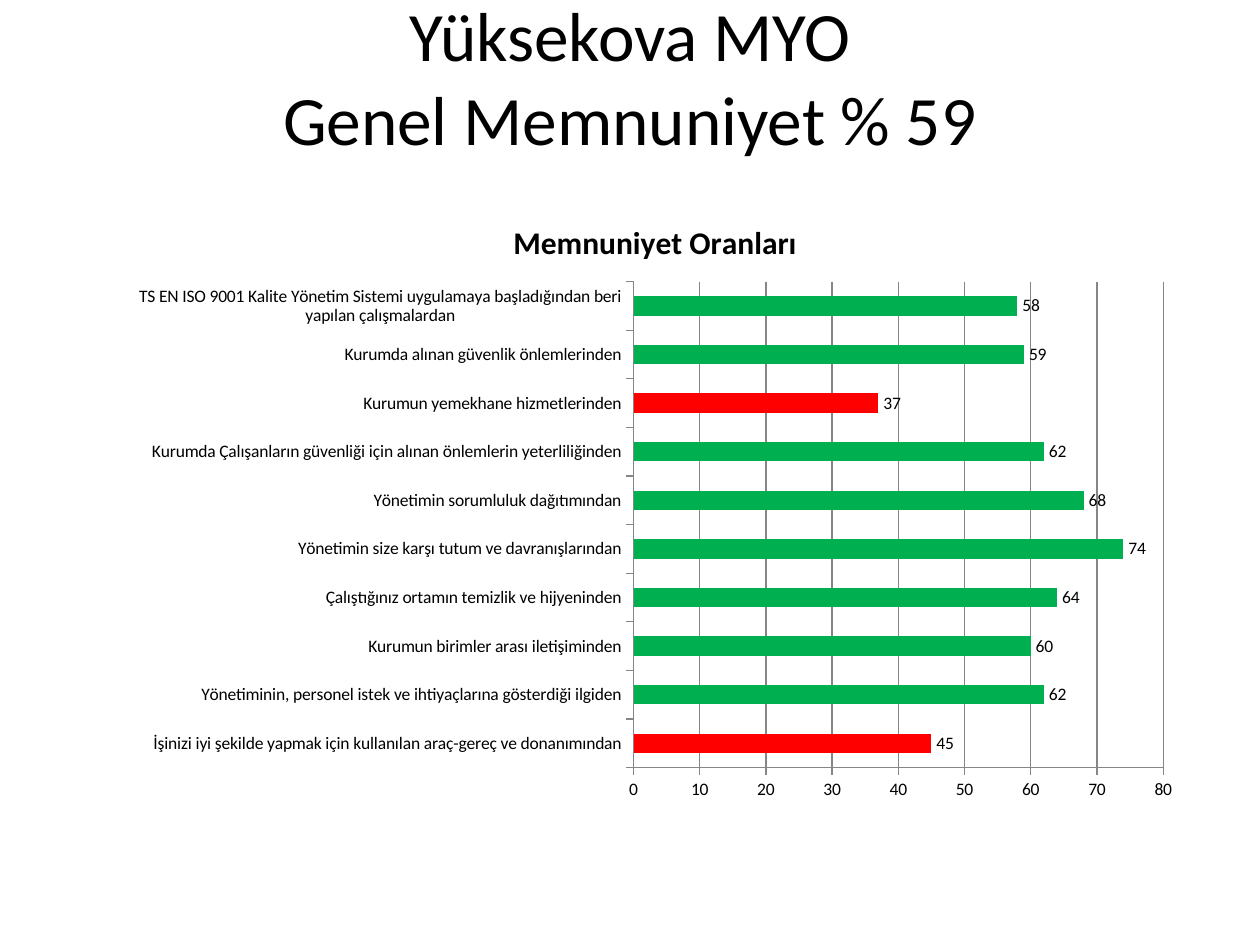
from dataclasses import dataclass

from lxml.etree import SubElement
from pptx import Presentation
from pptx.chart.data import CategoryChartData
from pptx.dml.color import RGBColor
from pptx.enum.chart import XL_CHART_TYPE as ChartType, XL_LABEL_POSITION as LabelPosition
from pptx.enum.chart import XL_TICK_MARK as TickMark
from pptx.enum.text import MSO_ANCHOR as Anchor, MSO_AUTO_SIZE as AutoSize, PP_ALIGN as Align
from pptx.oxml.ns import qn
from pptx.util import Inches, Pt

HEADING = "Yüksekova MYO\vGenel Memnuniyet % 59"
MEASURE = "Memnuniyet Oranları"
RATES = [
    ("İşinizi iyi şekilde yapmak için kullanılan araç-gereç ve donanımından", 45),
    ("Yönetiminin, personel istek ve ihtiyaçlarına gösterdiği ilgiden", 62),
    ("Kurumun birimler arası iletişiminden", 60),
    ("Çalıştığınız ortamın temizlik ve hijyeninden", 64),
    ("Yönetimin size karşı tutum ve davranışlarından", 74),
    ("Yönetimin sorumluluk dağıtımından", 68),
    ("Kurumda Çalışanların güvenliği için alınan önlemlerin yeterliliğinden", 62),
    ("Kurumun yemekhane hizmetlerinden", 37),
    ("Kurumda alınan güvenlik önlemlerinden", 59),
    ("TS EN ISO 9001 Kalite Yönetim Sistemi uygulamaya başladığından beri "
     "yapılan çalışmalardan", 58),
]
LOW_LIMIT = 50
WIDTH, HEIGHT = Inches(10), Inches(7.5)
HEADING_BOX = (0.05, 0.04, 0.9, 0.167)
CHART_BOX = (0.091, 0.207, 0.858, 0.651)
PLOT_SHARES = {"x": 0.48, "y": 0.14, "w": 0.49, "h": 0.79}


@dataclass(frozen=True)
class Theme:
    font: str = "Calibri"
    ink: RGBColor = RGBColor(0, 0, 0)
    grid: RGBColor = RGBColor(0x86, 0x86, 0x86)
    good: RGBColor = RGBColor(0x00, 0xB0, 0x50)
    low: RGBColor = RGBColor(0xFF, 0, 0)
    heading: float = 39.6
    chart_title: float = 18
    label: float = 10


THEME = Theme()


def place(box):
    return [int(share * side) for share, side in zip(box, (WIDTH, HEIGHT) * 2)]


def style(font, size, bold=False):
    font.name, font.size, font.bold = THEME.font, Pt(size), bold
    font.color.rgb = THEME.ink


def write(frame, text, size, bold=False, align=Align.CENTER):
    frame.text = text
    for paragraph in frame.paragraphs:
        paragraph.alignment = align
        for run in paragraph.runs:
            style(run.font, size, bold)


def add_heading(slide):
    heading = slide.shapes.title
    heading.left, heading.top, heading.width, heading.height = place(HEADING_BOX)
    frame = heading.text_frame
    frame.word_wrap, frame.auto_size = True, AutoSize.NONE
    frame.vertical_anchor = Anchor.MIDDLE
    frame.margin_bottom = Inches(0.7)
    write(frame, HEADING, THEME.heading)


def fix_plot(chart):
    plot_area = chart._chartSpace.chart.plotArea
    for old in plot_area.findall(qn("c:layout")):
        plot_area.remove(old)
    layout = SubElement(plot_area, qn("c:layout"))
    plot_area.insert(0, layout)
    manual = SubElement(layout, qn("c:manualLayout"))
    settings = {"layoutTarget": "inner", "xMode": "edge", "yMode": "edge", **PLOT_SHARES}
    for tag, value in settings.items():
        SubElement(manual, qn(f"c:{tag}")).set("val", str(value))


def add_rates(slide):
    data = CategoryChartData()
    data.categories = [question for question, _ in RATES]
    data.add_series(MEASURE, [rate for _, rate in RATES])
    chart = slide.shapes.add_chart(ChartType.BAR_CLUSTERED, *place(CHART_BOX), data).chart
    style(chart.font, THEME.label)
    chart.has_legend = False
    chart.has_title = True
    write(chart.chart_title.text_frame, MEASURE, THEME.chart_title, bold=True)
    chart.chart_title.include_in_layout = False
    fix_plot(chart)

    for axis in (chart.category_axis, chart.value_axis):
        axis.major_tick_mark, axis.minor_tick_mark = TickMark.OUTSIDE, TickMark.NONE
        axis.format.line.color.rgb = THEME.grid
        axis.format.line.width = Pt(0.75)
        style(axis.tick_labels.font, THEME.label)
    scale = chart.value_axis
    scale.minimum_scale, scale.maximum_scale, scale.major_unit = 0, 80, 10
    scale.has_major_gridlines = True
    scale.major_gridlines.format.line.color.rgb = THEME.grid
    scale.major_gridlines.format.line.width = Pt(0.75)

    plot = chart.plots[0]
    plot.gap_width, plot.vary_by_categories = 150, False
    plot.has_data_labels = True
    plot.data_labels.show_value = True
    plot.data_labels.position = LabelPosition.OUTSIDE_END
    style(plot.data_labels.font, THEME.label)
    bars = plot.series[0]
    bars.format.fill.solid()
    bars.format.fill.fore_color.rgb = THEME.good
    for index, (_, rate) in enumerate(RATES):
        if rate < LOW_LIMIT:
            fill = bars.points[index].format.fill
            fill.solid()
            fill.fore_color.rgb = THEME.low


def main():
    deck = Presentation()
    deck.slide_width, deck.slide_height = WIDTH, HEIGHT
    slide = deck.slides.add_slide(deck.slide_layouts.get_by_name("Title Only"))
    add_heading(slide)
    add_rates(slide)
    deck.save("out.pptx")


if __name__ == "__main__":
    main()
